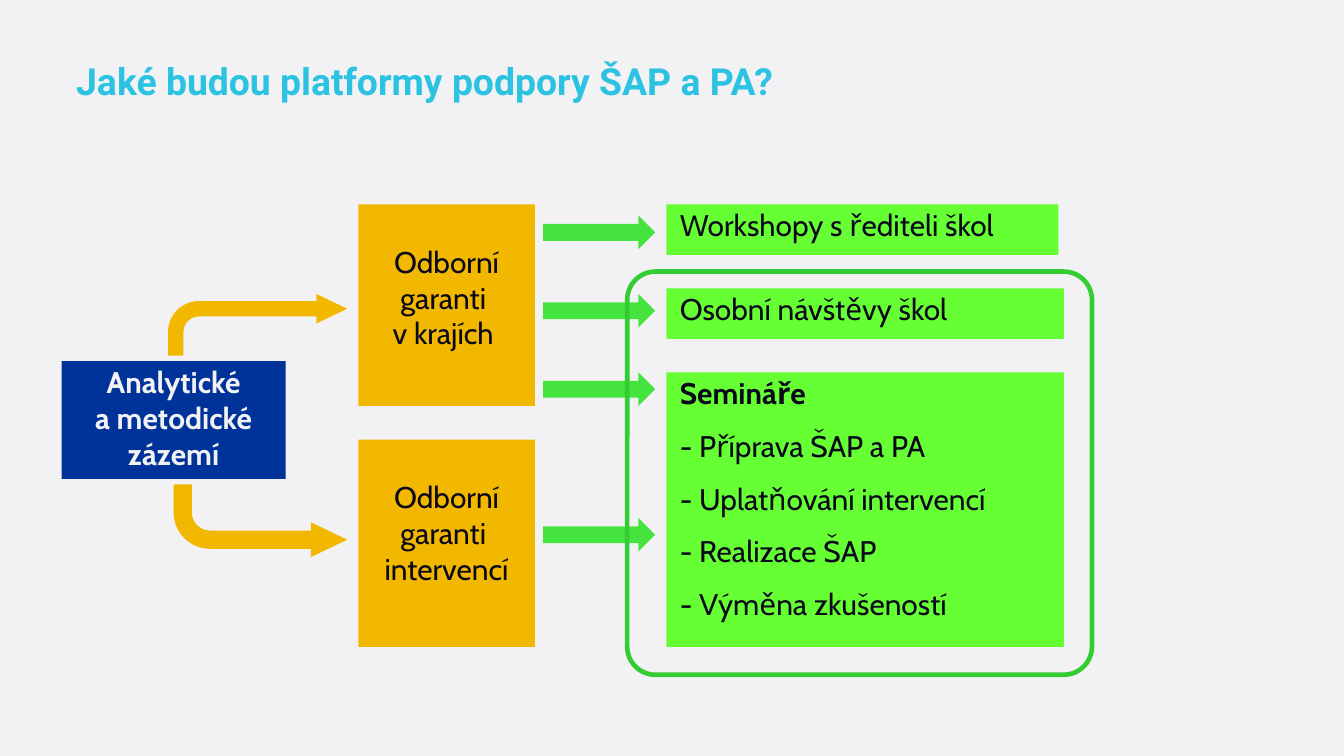
from pptx import Presentation
from pptx.dml.color import RGBColor
from pptx.enum.shapes import MSO_SHAPE as Kind
from pptx.enum.text import MSO_ANCHOR as Anchor, PP_ALIGN as Align
from pptx.util import Inches, Pt

PALE = RGBColor(0xF2, 0xF2, 0xF5)
INK = RGBColor(0x0A, 0x09, 0x1B)
CYAN = RGBColor(0x2B, 0xC3, 0xE1)
NAVY = RGBColor(0x00, 0x33, 0x99)
GOLD = RGBColor(0xF2, 0xB8, 0x00)
LIME = RGBColor(0x66, 0xFF, 0x33)
GREEN = RGBColor(0x45, 0xE3, 0x3D)
EDGE = RGBColor(0x33, 0xCC, 0x33)

COLS, ROWS = 240, 135
WIDE, HIGH = Inches(20), Inches(11.25)


def write(frame, lines, font="Cabin", size=32, color=INK, bold=False,
          head=False, align=Align.LEFT, gap=0, lead=None):
    """Fill a frame, one paragraph a line; head makes only the first bold."""
    for i, line in enumerate(lines):
        par = frame.paragraphs[0] if i == 0 else frame.add_paragraph()
        par.alignment = align
        if lead:
            par.line_spacing = lead
        if gap and i:
            par.space_before = Pt(gap)
        run = par.add_run()
        run.text = line
        face = run.font
        face.name, face.size = font, Pt(size)
        face.bold = bold or (head and i == 0)
        face.color.rgb = color


class Board:
    """Places elements on a slide by columns and rows of the grid."""

    def __init__(self, slide):
        self.slide = slide
        slide.background.fill.solid()
        slide.background.fill.fore_color.rgb = PALE

    def area(self, x, y, w, h):
        col, row = WIDE / COLS, HIGH / ROWS
        return int(x * col), int(y * row), int(w * col), int(h * row)

    def title(self, text, *cell):
        box = self.slide.shapes.title
        box.left, box.top, box.width, box.height = self.area(*cell)
        box.text_frame.vertical_anchor = Anchor.MIDDLE
        box.text_frame.word_wrap = True
        write(box.text_frame, [text], font="Roboto", size=40, color=CYAN,
              bold=True, lead=0.9)

    def shape(self, kind, cell, fill=None, line=None, adjust=()):
        item = self.slide.shapes.add_shape(kind, *self.area(*cell))
        item.shadow.inherit = False
        if fill:
            item.fill.solid()
            item.fill.fore_color.rgb = fill
        else:
            item.fill.background()
        if line:
            item.line.color.rgb, item.line.width = line, Pt(5)
        else:
            item.line.fill.background()
        for i, value in enumerate(adjust):
            item.adjustments[i] = value
        return item

    def box(self, cell, fill, lines, left=0, top=0.04, **form):
        frame = self.shape(Kind.RECTANGLE, cell, fill).text_frame
        frame.word_wrap = True
        frame.vertical_anchor = Anchor.TOP
        frame.margin_left, frame.margin_right = Inches(left), 0
        frame.margin_top, frame.margin_bottom = Inches(top), Inches(0.01)
        write(frame, lines, **form)

    def arrow(self, *cell):
        self.shape(Kind.RIGHT_ARROW, cell, GREEN)

    def bend(self, *cell, flip=False):
        item = self.shape(Kind.BENT_ARROW, cell, GOLD,
                          adjust=(0.25, 0.24, 0.5, 0.5))
        if flip:
            item.element.spPr.xfrm.set("flipV", "1")

    def frame(self, *cell):
        self.shape(Kind.ROUNDED_RECTANGLE, cell, line=EDGE, adjust=(0.07,))


def main():
    deck = Presentation()
    deck.slide_width, deck.slide_height = WIDE, HIGH
    board = Board(deck.slides.add_slide(deck.slide_layouts[5]))
    board.title("Jaké budou platformy podpory ŠAP a PA?", 12.4, 10.6, 216.6, 8.5)

    board.box((11, 64.5, 40, 21), NAVY, ["Analytické", "a metodické zázemí"],
              color=PALE, bold=True, align=Align.CENTER)
    for y, h, last in ((36.5, 36, "v krajích "), (78.5, 37, "intervencí")):
        board.box((64, y, 31.5, h), GOLD, ["Odborní garanti ", last],
                  top=0.58, align=Align.CENTER)

    seminars = ["Semináře", "- Příprava ŠAP a PA", "- Uplatňování intervencí",
                "- Realizace ŠAP", "- Výměna zkušeností"]
    for y, w, h, lines in ((36.5, 70, 9, ["Workshopy s řediteli škol"]),
                           (51.5, 71, 9, ["Osobní návštěvy škol"]),
                           (66.5, 71, 49, seminars)):
        board.box((119, y, w, h), LIME, lines, left=0.2, gap=18,
                  head=len(lines) > 1)

    for y in (38.5, 52.5, 66.5, 92.5):
        board.arrow(97, y, 20, 6)
    board.bend(30, 52.5, 32, 11)
    board.bend(31, 86.5, 31, 13, flip=True)
    board.frame(112, 48.5, 83, 72)
    deck.save("out.pptx")


if __name__ == "__main__":
    main()
